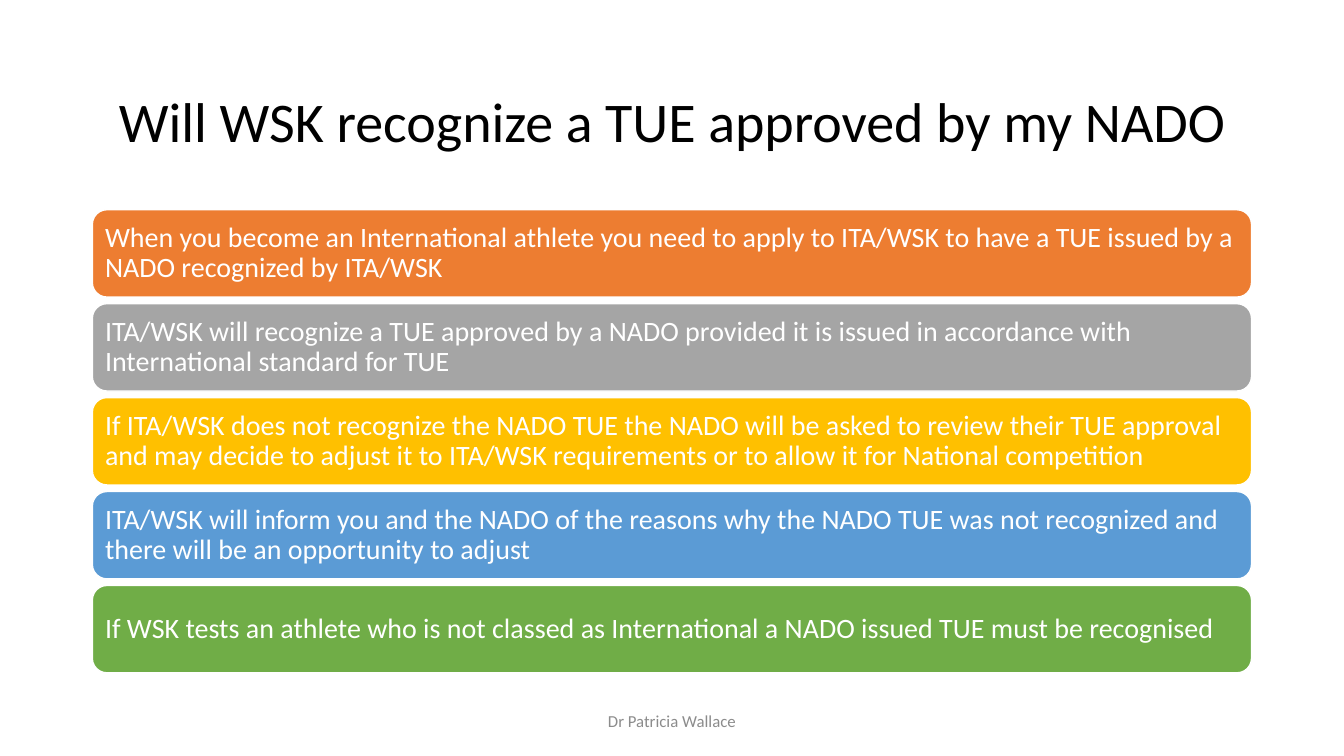
"""Build the slide on recognition of a TUE approved by a NADO."""
from pptx import Presentation
from pptx.dml.color import RGBColor
from pptx.enum.shapes import MSO_SHAPE as Shape
from pptx.enum.text import MSO_ANCHOR as Anchor, PP_ALIGN as Align
from pptx.util import Pt

COLORS = {
    "black": "000000", "white": "FFFFFF", "footer": "8C8C8C",
    "orange": "ED7D31", "gray": "A5A5A5", "gold": "FFC000",
    "blue": "5B9BD5", "green": "70AD47",
}
ANSWERS = [
    ("orange", "When you become an International athlete you need to apply to ITA/WSK "
               "to have a TUE issued by a NADO recognized by ITA/WSK"),
    ("gray", "ITA/WSK will recognize a TUE approved by a NADO provided it is issued "
             "in accordance with International standard for TUE"),
    ("gold", "If ITA/WSK does not recognize the NADO TUE the NADO will be asked to review "
             "their TUE approval and may decide to adjust it to ITA/WSK requirements "
             "or to allow it for National competition"),
    ("blue", "ITA/WSK will inform you and the NADO of the reasons why the NADO TUE "
             "was not recognized and there will be an opportunity to adjust"),
    ("green", "If WSK tests an athlete who is not classed as International "
              "a NADO issued TUE must be recognised"),
]
LEFT, WIDTH = 66, 828
BAR_TOP, BAR_HEIGHT, BAR_PITCH = 149.8, 62.4, 67.1


def color(name):
    return RGBColor.from_string(COLORS[name])


def write_text(shape, text, size, color_name, align=Align.CENTER, line_spacing=0.9, inset=None):
    frame = shape.text_frame
    frame.word_wrap = True
    frame.vertical_anchor = Anchor.MIDDLE
    if inset is not None:
        frame.margin_left = frame.margin_right = Pt(inset)
        frame.margin_top = frame.margin_bottom = Pt(inset)
    paragraph = frame.paragraphs[0]
    paragraph.text = text
    paragraph.alignment = align
    paragraph.line_spacing = line_spacing
    paragraph.font.name = "Calibri"
    paragraph.font.size = Pt(size)
    paragraph.font.color.rgb = color(color_name)


def add_title(slide, text):
    title = slide.shapes.title
    title.left, title.top, title.width, title.height = Pt(LEFT), Pt(44), Pt(WIDTH), Pt(89)
    write_text(title, text, 40, "black")


def add_answer_bar(slide, top, fill, text):
    bar = slide.shapes.add_shape(
        Shape.ROUNDED_RECTANGLE, Pt(LEFT), Pt(top), Pt(WIDTH), Pt(BAR_HEIGHT))
    bar.shadow.inherit = False
    bar.fill.solid()
    bar.fill.fore_color.rgb = color(fill)
    bar.line.color.rgb = color("white")
    bar.line.width = Pt(1)
    write_text(bar, text, 20, "white", align=Align.LEFT, inset=6)


def add_footer(slide, text):
    footer = slide.shapes.add_textbox(Pt(318), Pt(500.5), Pt(324), Pt(28.75))
    write_text(footer, text, 12, "footer", line_spacing=1.0)


def main():
    presentation = Presentation()
    presentation.slide_width, presentation.slide_height = Pt(960), Pt(540)
    slide = presentation.slides.add_slide(presentation.slide_layouts[5])
    add_title(slide, "Will WSK recognize a TUE approved by my NADO")
    for row, (fill, text) in enumerate(ANSWERS):
        add_answer_bar(slide, BAR_TOP + row * BAR_PITCH, fill, text)
    add_footer(slide, "Dr Patricia Wallace")
    presentation.save("out.pptx")


if __name__ == "__main__":
    main()
